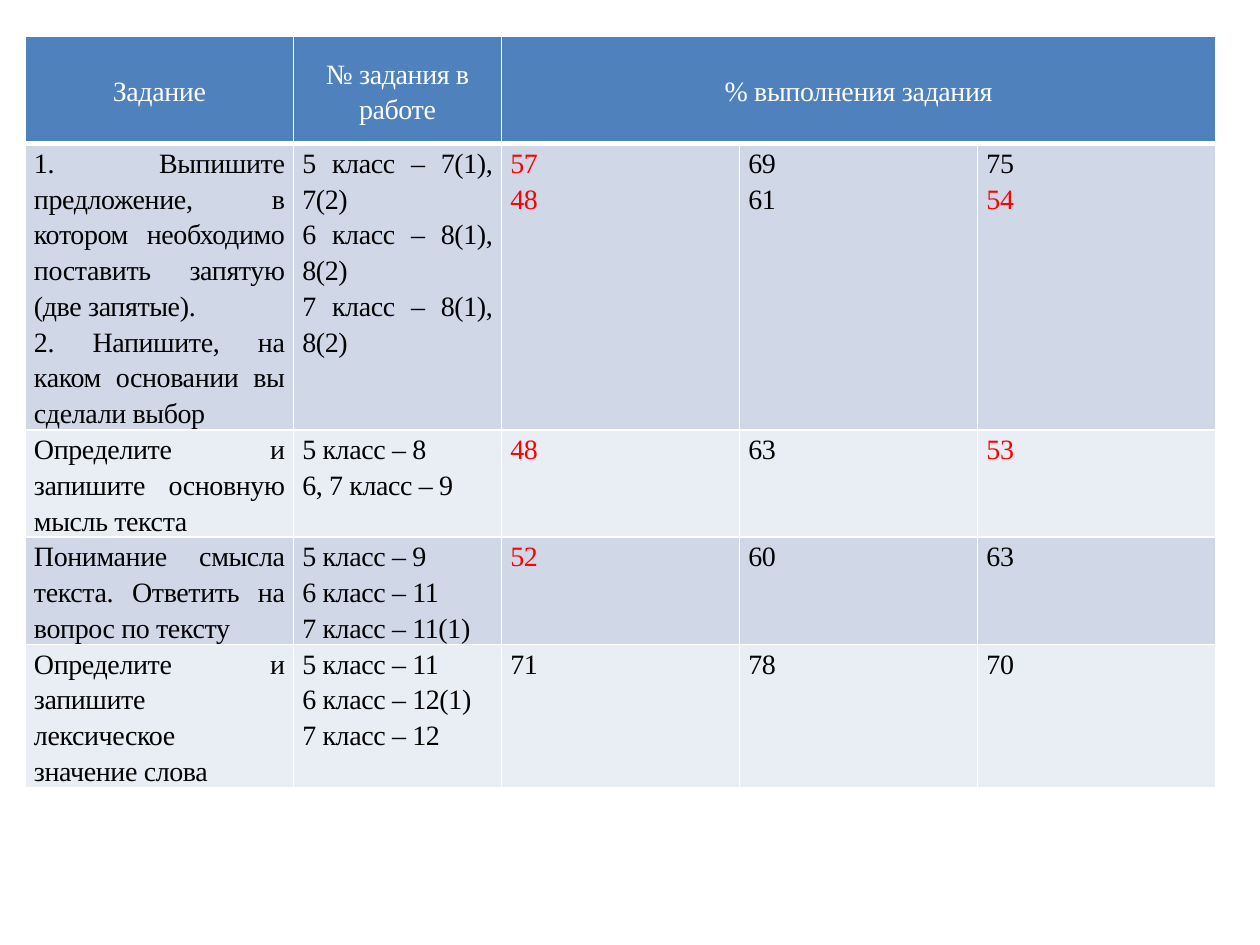
"""Build a slide with a table of task completion rates."""
from lxml.etree import SubElement
from pptx import Presentation
from pptx.dml.color import RGBColor
from pptx.enum.text import MSO_ANCHOR, PP_ALIGN
from pptx.oxml.ns import qn
from pptx.util import Inches, Pt

HEADINGS = ["Задание", "№ задания в работе", "% выполнения задания"]
TASKS = [
    (["1. Выпишите предложение, в котором необходимо поставить запятую (две запятые). ",
      "2. Напишите, на каком основании вы сделали выбор"],
     ["5 класс – 7(1), 7(2)", "6 класс – 8(1), 8(2)", "7 класс – 8(1), 8(2)"],
     [57, 48], [69, 61], [75, 54]),
    (["Определите и запишите основную мысль текста"],
     ["5 класс – 8", "6, 7 класс – 9"],
     [48], [63], [53]),
    (["Понимание смысла текста. Ответить на вопрос по тексту"],
     ["5 класс – 9", "6 класс – 11", "7 класс – 11(1)"],
     [52], [60], [63]),
    (["Определите и запишите лексическое значение слова"],
     ["5 класс – 11", "6 класс – 12(1)", "7 класс – 12"],
     [71], [78], [70]),
]
COLUMN_WIDTHS = [2.13, 1.65, 1.89, 1.89, 1.89]
ROW_HEIGHTS = [0.85] + [0.41] * len(TASKS)
LOW_RATE = 60

FONT = "Times New Roman"
WHITE = RGBColor(0xFF, 0xFF, 0xFF)
BLACK = RGBColor(0, 0, 0)
RED = RGBColor(0xFF, 0, 0)
HEADER_BLUE = RGBColor(0x4F, 0x81, 0xBD)
BANDS = [RGBColor(0xD0, 0xD8, 0xE8), RGBColor(0xE9, 0xED, 0xF4)]


def set_borders(cell):
    properties = cell._tc.get_or_add_tcPr()
    for side, width in (("L", 1), ("R", 1), ("T", 1), ("B", 3)):
        line = SubElement(properties, qn(f"a:ln{side}"), w=str(Pt(width)))
        SubElement(SubElement(line, qn("a:solidFill")), qn("a:srgbClr"), val=str(WHITE))


def fill_cell(cell, lines, fill, alignment, color):
    cell.margin_left = cell.margin_right = Inches(0.07)
    cell.margin_top = cell.margin_bottom = 0
    cell.fill.solid()
    cell.fill.fore_color.rgb = fill
    for index, line in enumerate(lines):
        frame = cell.text_frame
        paragraph = frame.add_paragraph() if index else frame.paragraphs[0]
        paragraph.alignment = alignment
        paragraph.line_spacing = 1.15
        run = paragraph.add_run()
        run.text = str(line)
        run.font.name = FONT
        run.font.size = Pt(16)
        run.font.bold = False
        is_low = isinstance(line, int) and line < LOW_RATE
        run.font.color.rgb = RED if is_low else color
        run.font._element.set("spc", "-20")


def main():
    presentation = Presentation()
    presentation.slide_width, presentation.slide_height = Inches(10), Inches(7.5)
    slide = presentation.slides.add_slide(presentation.slide_layouts[6])
    table_frame = slide.shapes.add_table(
        len(ROW_HEIGHTS), len(COLUMN_WIDTHS),
        Inches(0.2), Inches(0.29), Inches(9.45), Inches(6.37))
    table = table_frame.table
    for column, width in zip(table.columns, COLUMN_WIDTHS):
        column.width = Inches(width)
    for row, height in zip(table.rows, ROW_HEIGHTS):
        row.height = Inches(height)
    table_frame.height = Inches(6.37)

    table.cell(0, 2).merge(table.cell(0, 4))
    for column, heading in enumerate(HEADINGS):
        cell = table.cell(0, column)
        set_borders(cell)
        cell.vertical_anchor = MSO_ANCHOR.MIDDLE
        fill_cell(cell, [heading], HEADER_BLUE, PP_ALIGN.CENTER, WHITE)
    for row, task in enumerate(TASKS):
        for column, lines in enumerate(task):
            fill_cell(table.cell(row + 1, column), lines, BANDS[row % 2],
                      PP_ALIGN.JUSTIFY, BLACK)
    presentation.save("out.pptx")


if __name__ == "__main__":
    main()
